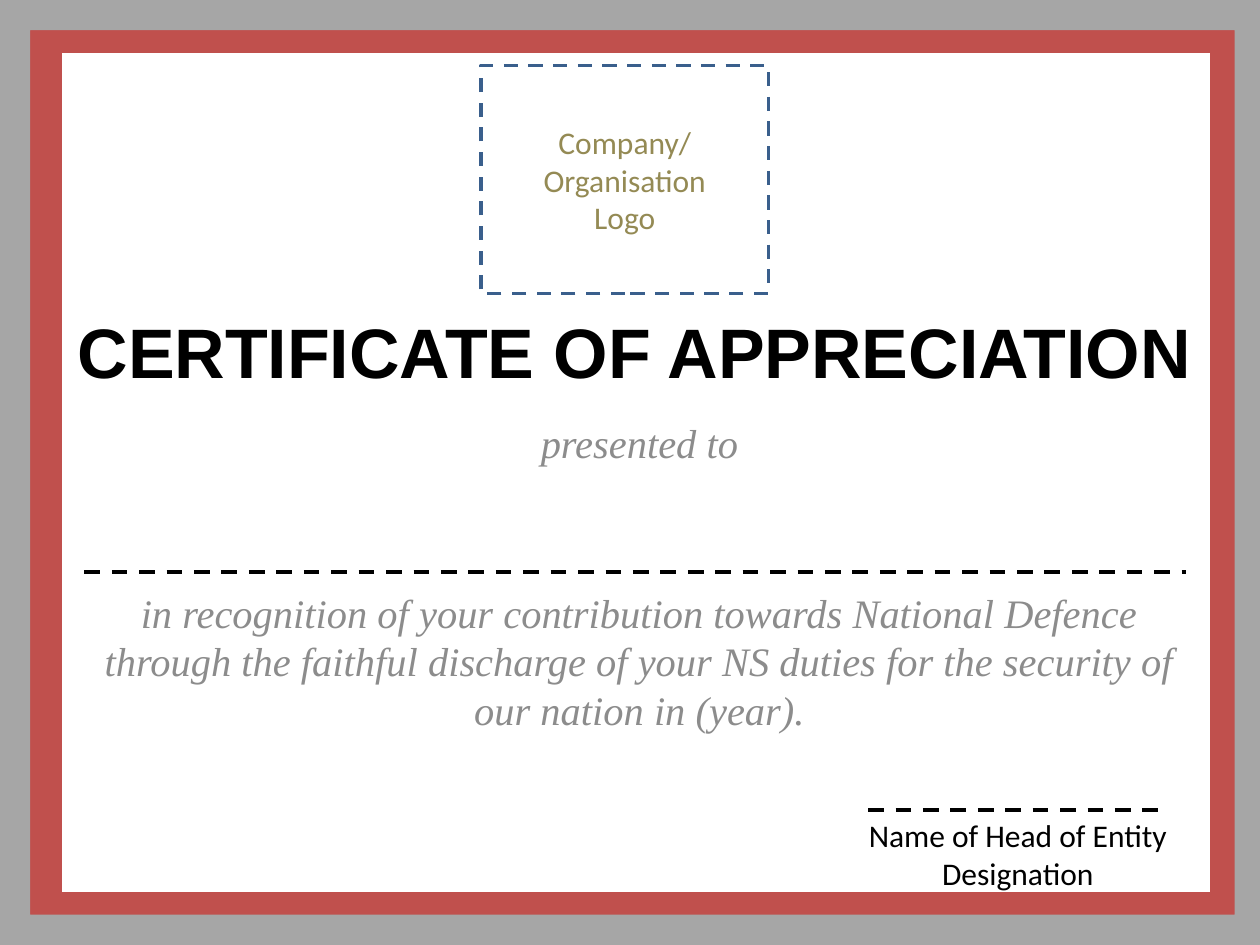
from dataclasses import dataclass

from pptx import Presentation
from pptx.dml.color import RGBColor
from pptx.enum.dml import MSO_LINE_DASH_STYLE as Dash
from pptx.enum.shapes import MSO_CONNECTOR as Connector, MSO_SHAPE as Shape
from pptx.enum.text import MSO_ANCHOR as Anchor, MSO_AUTO_SIZE as AutoSize, PP_ALIGN as Align
from pptx.oxml.ns import qn
from pptx.util import Cm, Pt


@dataclass(frozen=True)
class TextStyle:
    font: str
    size: float
    color: str
    bold: bool = False
    italic: bool = False


class Theme:
    black, red, gray, blue = "000000", "C0504D", "A6A6A6", "3A5F8C"
    title = TextStyle("Arial", 40, black, bold=True)
    citation = TextStyle("Times New Roman", 23.1, "8C8C8C", italic=True)
    signature = TextStyle("Calibri", 18, black)
    logo = TextStyle("Calibri", 18, "948A54")
    border_width, rule_width = 2, 2.25


class Certificate:
    def __init__(self, slide):
        self.slide = slide
        self.shapes = slide.shapes

    def set_text(self, shape, lines, style, anchor=Anchor.TOP, wrap=True):
        """Fill a shape with centred paragraphs and return them."""
        frame = shape.text_frame
        frame.text = "\n".join(lines)
        frame.auto_size = AutoSize.NONE
        frame.word_wrap = wrap
        frame.vertical_anchor = anchor
        for para in frame.paragraphs:
            para.alignment = Align.CENTER
            font = para.font
            font.name, font.size = style.font, Pt(style.size)
            font.bold, font.italic = style.bold, style.italic
            font.color.rgb = RGBColor.from_string(style.color)
        return frame.paragraphs

    def title(self, text, left, top, width, height):
        title = self.shapes.title
        title.left, title.top = Cm(left), Cm(top)
        title.width, title.height = Cm(width), Cm(height)
        self.set_text(title, [text], Theme.title, Anchor.MIDDLE)

    def text(self, lines, style, left, top, width, height, wrap=True):
        box = self.shapes.add_textbox(Cm(left), Cm(top), Cm(width), Cm(height))
        return self.set_text(box, lines, style, wrap=wrap)

    def outline(self, line, color, width, dashed=False):
        line.color.rgb = RGBColor.from_string(color)
        line.width = Pt(width)
        if dashed:
            line.dash_style = Dash.DASH

    def frame(self, color, thickness, left, top, width, height, outlined=False):
        frame = self.shapes.add_shape(Shape.FRAME, Cm(left), Cm(top), Cm(width), Cm(height))
        frame.shadow.inherit = False
        frame.adjustments[0] = thickness / height
        frame.fill.solid()
        frame.fill.fore_color.rgb = RGBColor.from_string(color)
        if outlined:
            self.outline(frame.line, color, Theme.border_width)
        else:
            frame.line.fill.background()

    def rule(self, left, right, y):
        rule = self.shapes.add_connector(Connector.STRAIGHT, Cm(left), Cm(y), Cm(right), Cm(y))
        self.outline(rule.line, Theme.black, Theme.rule_width, dashed=True)
        properties = rule._element.spPr
        properties.append(properties.makeelement(qn("a:effectLst"), {}))

    def logo_area(self, lines, left, top, width, height):
        area = self.shapes.add_shape(Shape.RECTANGLE, Cm(left), Cm(top), Cm(width), Cm(height))
        area.shadow.inherit = False
        area.fill.background()
        self.outline(area.line, Theme.blue, Theme.border_width, dashed=True)
        self.set_text(area, lines, Theme.logo, Anchor.MIDDLE)


def main():
    deck = Presentation()
    deck.slide_width, deck.slide_height = Cm(25.4), Cm(19.05)
    page = Certificate(deck.slides.add_slide(deck.slide_layouts[5]))

    # Title and inner border
    page.title("CERTIFICATE OF APPRECIATION", -0.71, 5.03, 27, 4.09)
    page.frame(Theme.red, 0.7, 0.51, 0.33, 24.61, 18.39, outlined=True)

    # Recipient line and signature
    page.rule(1.7, 23.9, 11.53)
    page.rule(17.5, 23.52, 16.33)
    page.text(["Name of Head of Entity", "Designation"], Theme.signature,
              17.22, 16.33, 6.6, 1.8, wrap=False)

    # Outer border
    page.frame(Theme.gray, 0.61, 0, 0, 25.5, 19.05)

    # Citation, with room for the recipient's name between its paragraphs
    presented, reason = page.text([
        "presented to",
        "in recognition of your contribution towards National Defence through the "
        "faithful discharge of your NS duties for the security of our nation in (year).",
    ], Theme.citation, 1.3, 8.3, 23.19, 6.48)
    presented.line_spacing = reason.line_spacing = Pt(27.7)
    reason.space_before = Pt(69.4)

    # Logo area
    page.logo_area(["Company/", "Organisation", "Logo"], 9.7, 1.32, 5.79, 4.6)

    deck.save("out.pptx")


if __name__ == "__main__":
    main()
